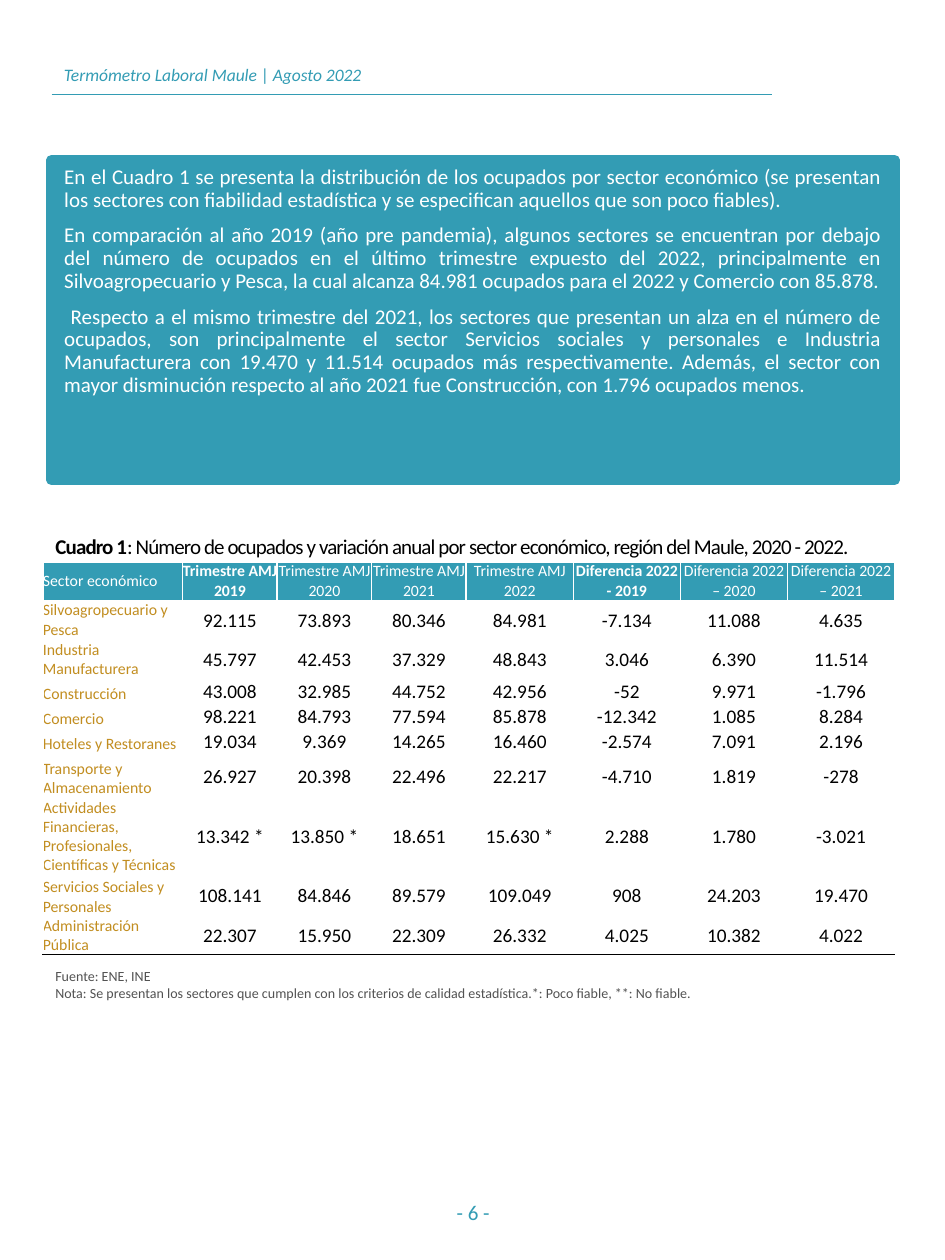
from dataclasses import dataclass

from pptx import Presentation
from pptx.dml.color import RGBColor
from pptx.enum.shapes import MSO_CONNECTOR
from pptx.enum.text import MSO_ANCHOR, MSO_AUTO_SIZE, PP_ALIGN
from pptx.oxml.ns import qn
from pptx.util import Inches, Pt
from lxml.etree import SubElement


@dataclass(frozen=True)
class Theme:
    font: str = "Calibri"
    teal: str = "339CB4"
    gold: str = "C28E21"
    grey: str = "525252"
    black: str = "000000"
    white: str = "FFFFFF"
    body_size: int = 12
    running_size: int = 10
    label_size: int = 9
    value_size: int = 11
    note_size: int = 8


PARAGRAPHS = [
    "En el Cuadro 1 se presenta la distribución de los ocupados por sector económico (se presentan los sectores con fiabilidad estadística y se especifican aquellos que son poco fiables).",
    "En comparación al año 2019 (año pre pandemia), algunos sectores se encuentran por debajo del número de ocupados en el último trimestre expuesto del 2022, principalmente en Silvoagropecuario y Pesca, la cual alcanza 84.981 ocupados para el 2022 y Comercio con 85.878.",
    " Respecto a el mismo trimestre del 2021, los sectores que presentan un alza en el número de ocupados, son principalmente el sector Servicios sociales y personales e Industria Manufacturera con 19.470 y 11.514 ocupados más respectivamente. Además, el sector con mayor disminución respecto al año 2021 fue Construcción, con 1.796 ocupados menos.",
]
HEADER = ["Sector económico", "Trimestre AMJ 2019", "Trimestre AMJ 2020",
          "Trimestre AMJ 2021", "Trimestre AMJ 2022", "Diferencia 2022 - 2019",
          "Diferencia 2022 – 2020", "Diferencia 2022 – 2021"]
BOLD_COLUMNS = (1, 5)
SECTORS = [
    ["Silvoagropecuario y Pesca", "92.115", "73.893", "80.346", "84.981", "-7.134", "11.088", "4.635"],
    ["Industria Manufacturera", "45.797", "42.453", "37.329", "48.843", "3.046", "6.390", "11.514"],
    ["Construcción", "43.008", "32.985", "44.752", "42.956", "-52", "9.971", "-1.796"],
    ["Comercio", "98.221", "84.793", "77.594", "85.878", "-12.342", "1.085", "8.284"],
    ["Hoteles y Restoranes", "19.034", "9.369", "14.265", "16.460", "-2.574", "7.091", "2.196"],
    ["Transporte y Almacenamiento", "26.927", "20.398", "22.496", "22.217", "-4.710", "1.819", "-278"],
    ["Actividades Financieras, Profesionales, Científicas y Técnicas",
     "13.342 *", "13.850 *", "18.651", "15.630 *", "2.288", "1.780", "-3.021"],
    ["Servicios Sociales y Personales", "108.141", "84.846", "89.579", "109.049", "908", "24.203", "19.470"],
    ["Administración Pública", "22.307", "15.950", "22.309", "26.332", "4.025", "10.382", "4.022"],
]
COLUMN_WIDTHS = [1.11] + [0.75] * 3 + [0.85] * 4
ROW_HEIGHTS = [0.3, 0.31, 0.31, 0.2, 0.2, 0.2, 0.35, 0.6, 0.33, 0.3]
NOTES = [
    "Fuente: ENE, INE",
    "Nota: Se presentan los sectores que cumplen con los criterios de calidad estadística.*: Poco fiable, **: No fiable.",
]


class ReportPage:
    def __init__(self, page, theme):
        self.page = page
        self.theme = theme

    def style(self, span, size, color, bold=False, italic=False):
        font = span.font
        font.name, font.size = self.theme.font, Pt(size)
        font.bold, font.italic = bold, italic
        font.color.rgb = RGBColor.from_string(color)

    def place(self, box, left, top, width, height):
        box.left, box.top = Inches(left), Inches(top)
        box.width, box.height = Inches(width), Inches(height)
        box.text_frame.word_wrap = True
        box.text_frame.auto_size = MSO_AUTO_SIZE.NONE
        box.text_frame.vertical_anchor = MSO_ANCHOR.TOP

    def summary(self, texts, *bounds):
        theme = self.theme
        box = self.page.placeholders[1]
        self.place(box, *bounds)
        box.fill.solid()
        box.fill.fore_color.rgb = RGBColor.from_string(theme.teal)
        box.line.color.rgb = RGBColor.from_string(theme.teal)
        box.line.width = Pt(6)
        box.text_frame.text = "\n".join(texts)
        for index, para in enumerate(box.text_frame.paragraphs):
            para.alignment = PP_ALIGN.JUSTIFY
            para.line_spacing = 0.9
            para.space_before = Pt(7.5 if index else 0)
            properties = para._p.get_or_add_pPr()
            properties.set("marL", "0")
            properties.set("indent", "0")
            SubElement(properties, qn("a:buNone"))
            self.style(para.runs[0], theme.body_size, theme.white)

    def caption(self, label, text, *bounds):
        box = self.page.shapes.title
        self.place(box, *bounds)
        para = box.text_frame.paragraphs[0]
        para.alignment = PP_ALIGN.JUSTIFY
        para.line_spacing = 0.9
        para.space_before = Pt(0)
        for words, bold in ((label, True), (text, False)):
            span = para.add_run()
            span.text = words
            self.style(span, self.theme.body_size, self.theme.black, bold)
            span.font._element.set("spc", "-50")

    def text(self, paragraphs, size, color, *bounds, align=PP_ALIGN.LEFT, anchor=MSO_ANCHOR.TOP):
        """Add a text box; each paragraph is a list of (words, italic) spans."""
        box = self.page.shapes.add_textbox(0, 0, 0, 0)
        self.place(box, *bounds)
        frame = box.text_frame
        frame.vertical_anchor = anchor
        for index, spans in enumerate(paragraphs):
            para = frame.add_paragraph() if index else frame.paragraphs[0]
            para.alignment = align
            for words, italic in spans:
                span = para.add_run()
                span.text = words
                self.style(span, size, color, italic=italic)

    def rule(self, left, right, top):
        line = self.page.shapes.add_connector(
            MSO_CONNECTOR.STRAIGHT, Inches(left), Inches(top), Inches(right), Inches(top))
        line.line.color.rgb = RGBColor.from_string(self.theme.teal)
        line.line.width = Pt(1)
        SubElement(line._element.spPr, qn("a:effectLst"))

    def borders(self, cell, bottom):
        properties = cell._tc.get_or_add_tcPr()
        white = self.theme.white
        for side, color in (("L", white), ("R", white), ("T", white), ("B", bottom)):
            edge = SubElement(properties, qn(f"a:ln{side}"), w=str(Pt(1)))
            fill = SubElement(edge, qn("a:solidFill"))
            SubElement(fill, qn("a:srgbClr"), val=color)

    def cell(self, cell, text, row, column, last):
        theme = self.theme
        heading, label = row == 0, column == 0
        inset = 0 if heading or label else Inches(0.01)
        cell.margin_left = cell.margin_right = cell.margin_top = inset
        cell.margin_bottom = 0
        cell.vertical_anchor = MSO_ANCHOR.BOTTOM if label and not heading else MSO_ANCHOR.MIDDLE
        self.borders(cell, theme.black if last else theme.white)
        if heading:
            cell.fill.solid()
            cell.fill.fore_color.rgb = RGBColor.from_string(theme.teal)
            size, color = theme.label_size, theme.white
        else:
            cell.fill.background()
            size, color = (theme.label_size, theme.gold) if label else (theme.value_size, theme.black)
        cell.text_frame.text = text
        para = cell.text_frame.paragraphs[0]
        para.alignment = PP_ALIGN.LEFT if label else PP_ALIGN.CENTER
        self.style(para.runs[0], size, color, heading and column in BOLD_COLUMNS)

    def table(self, rows, left, top):
        table = self.page.shapes.add_table(
            len(rows), len(rows[0]), Inches(left), Inches(top),
            Inches(sum(COLUMN_WIDTHS)), Inches(sum(ROW_HEIGHTS))).table
        table.first_row = table.horz_banding = False
        for column, width in zip(table.columns, COLUMN_WIDTHS):
            column.width = Inches(width)
        for row, height in zip(table.rows, ROW_HEIGHTS):
            row.height = Inches(height)
        for row, texts in enumerate(rows):
            for column, text in enumerate(texts):
                self.cell(table.cell(row, column), text, row, column, row == len(rows) - 1)


def main():
    deck = Presentation()
    deck.slide_width, deck.slide_height = Inches(7.5), Inches(10)
    theme = Theme()
    report = ReportPage(deck.slides.add_slide(deck.slide_layouts[1]), theme)
    report.rule(0.41, 6.13, 0.75)
    report.text([[("Termómetro Laboral Maule ", True), ("| ", False), ("Agosto 2022", True)]],
                theme.running_size, theme.teal, 0.41, 0.46, 2.93, 0.27)
    report.summary(PARAGRAPHS, 0.41, 1.27, 6.69, 2.54)
    report.caption("Cuadro 1", ": Número de ocupados y variación anual por sector económico, región del Maule, 2020 - 2022.",
                   0.34, 4.21, 6.98, 0.28)
    report.table([HEADER] + SECTORS, 0.34, 4.46)
    report.text([[(note, False)] for note in NOTES],
                theme.note_size, theme.grey, 0.34, 7.63, 6.02, 0.37)
    report.text([[("- 6 -", False)]], theme.body_size, theme.teal, 2.97, 9.46, 1.57, 0.31,
                align=PP_ALIGN.CENTER, anchor=MSO_ANCHOR.BOTTOM)
    deck.save("out.pptx")


if __name__ == "__main__":
    main()
